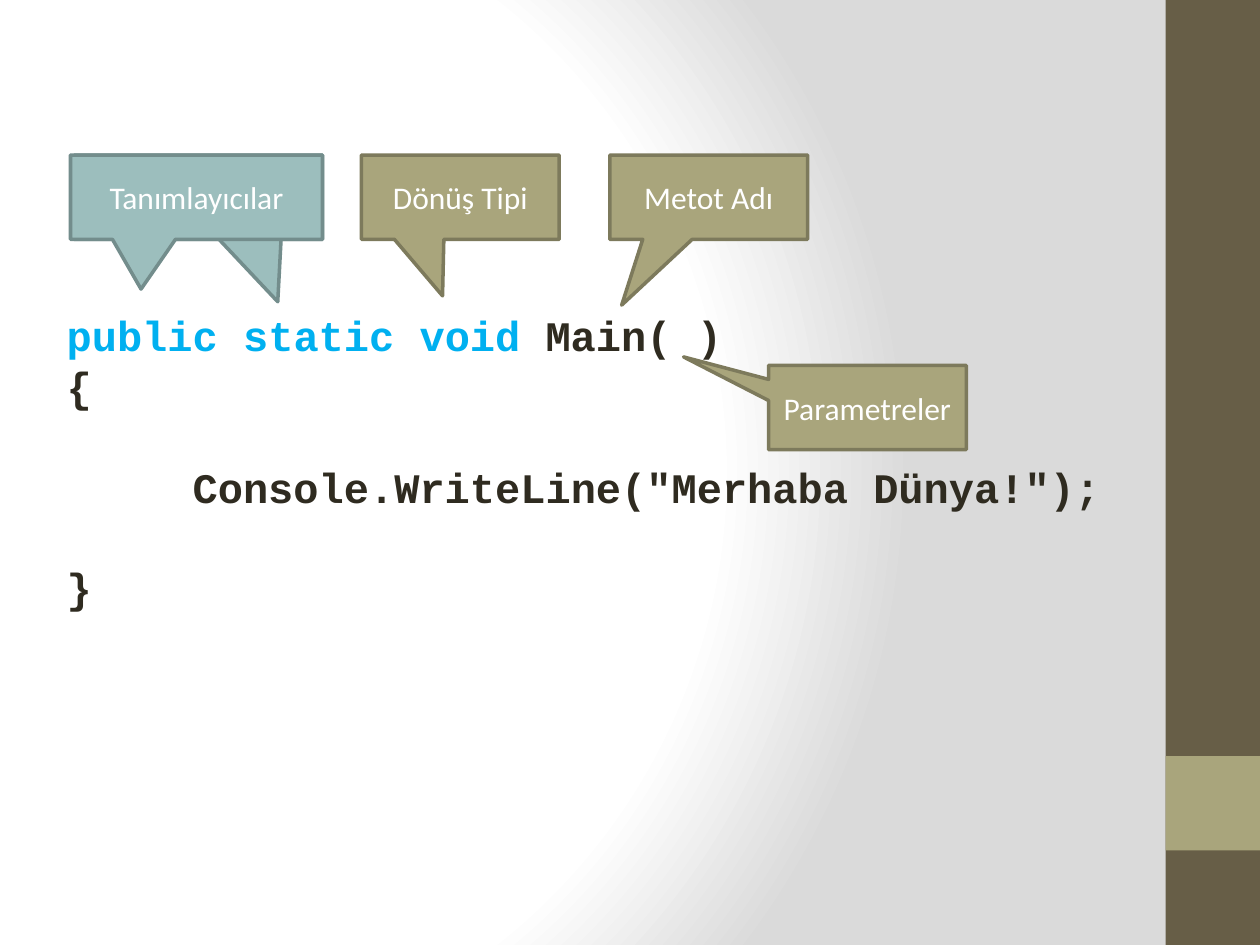
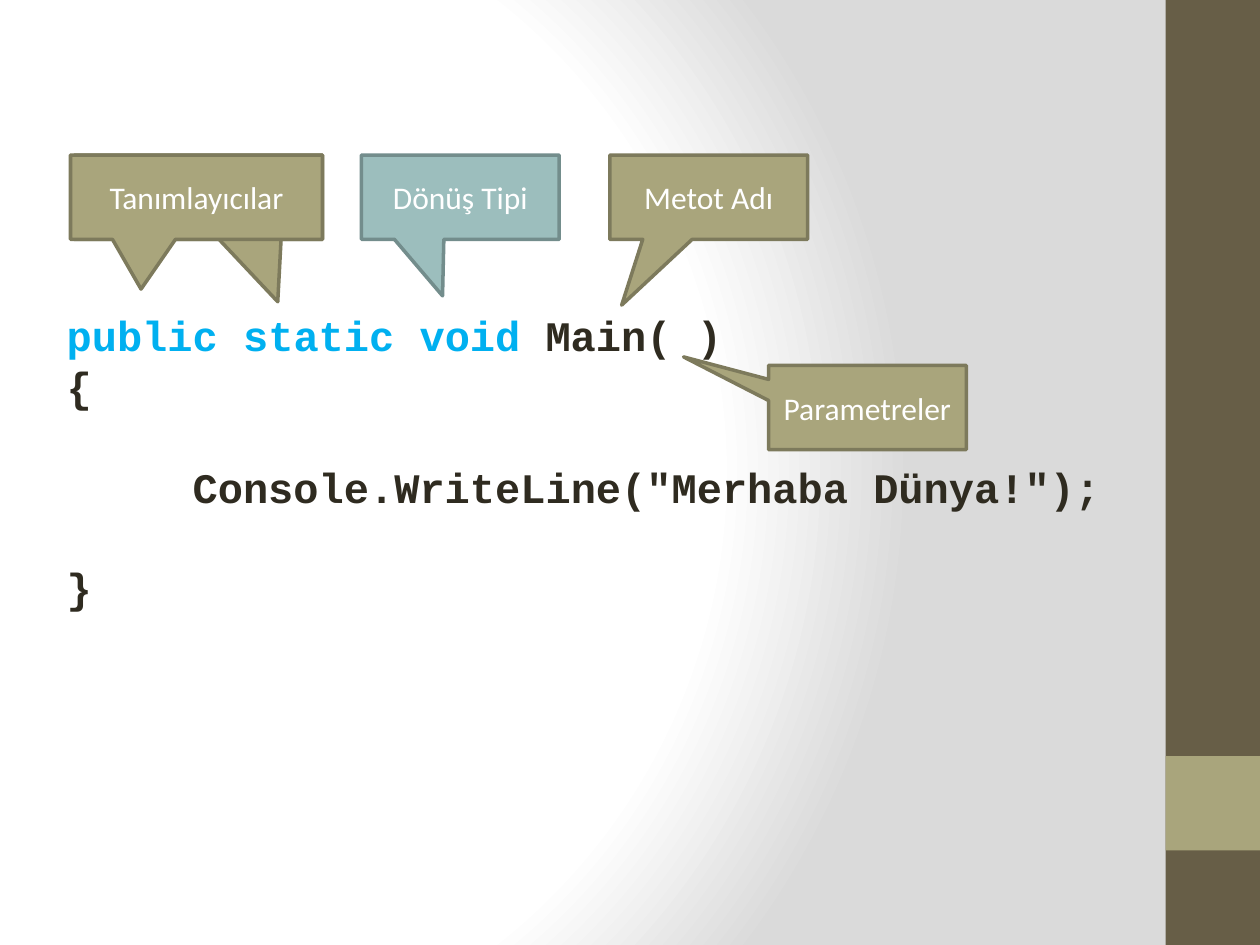
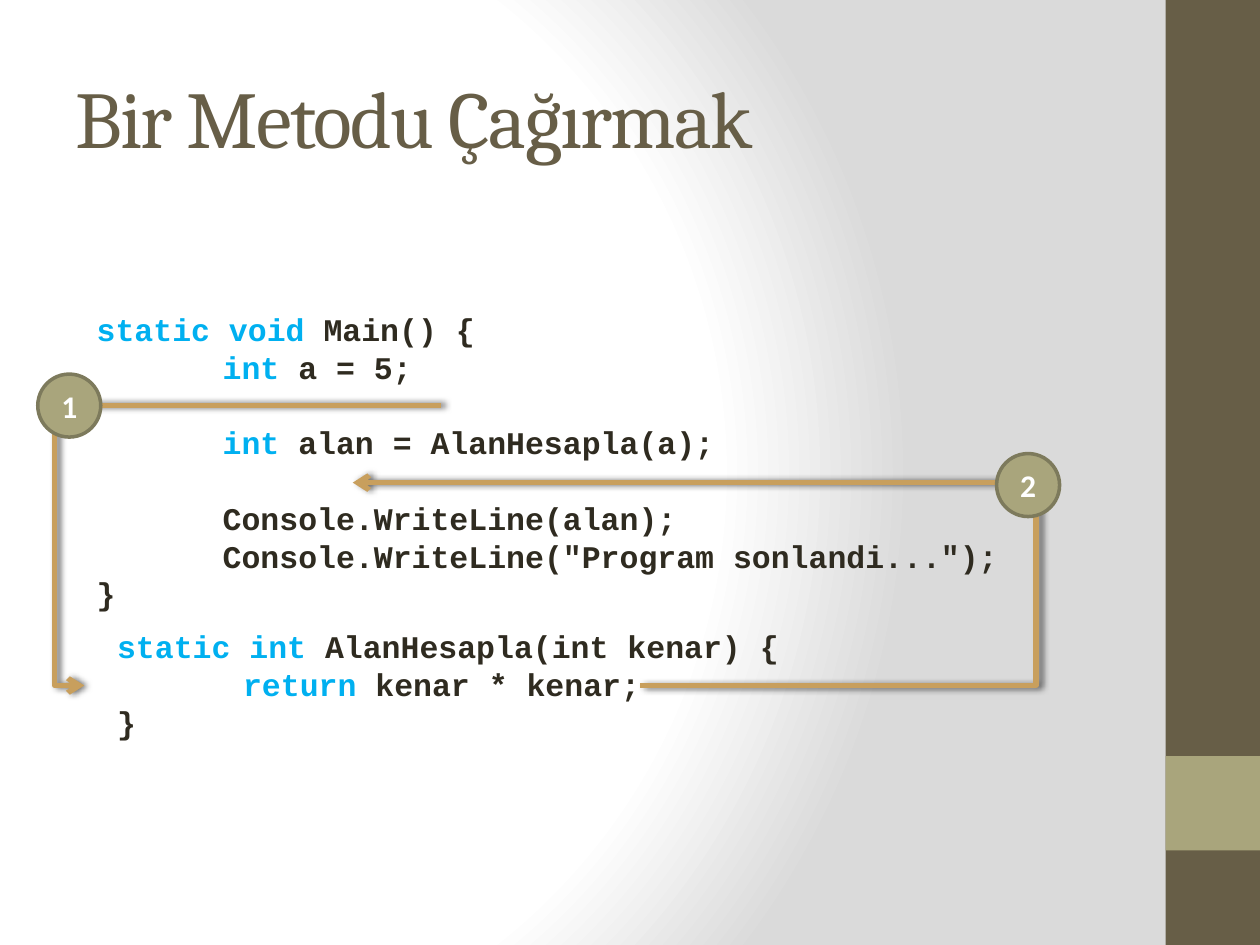
from dataclasses import dataclass
from typing import NamedTuple

from lxml import etree
from pptx import Presentation
from pptx.dml.color import RGBColor as RGB
from pptx.enum.shapes import MSO_CONNECTOR, MSO_SHAPE as SHAPE
from pptx.enum.text import MSO_ANCHOR as ANCHOR, MSO_AUTO_SIZE as FIT, PP_ALIGN as ALIGN
from pptx.oxml import parse_xml
from pptx.oxml.ns import nsdecls, qn
from pptx.util import Pt


@dataclass(frozen=True)
class Theme:
    brown: RGB = RGB.from_string("675E47")
    olive: RGB = RGB.from_string("A9A57C")
    olive_edge: RGB = RGB.from_string("7D7A5C")
    teal: RGB = RGB.from_string("9CBEBD")
    teal_edge: RGB = RGB.from_string("738D8C")
    gold: RGB = RGB.from_string("C89F5D")
    keyword: RGB = RGB.from_string("00B0F0")
    ink: RGB = RGB.from_string("2F2B20")
    white: RGB = RGB.from_string("FFFFFF")
    title_font: str = "Cambria"
    body_font: str = "Calibri"
    code_font: str = "Courier New"
    title_size: float = 46
    code_size: float = 24
    body_size: float = 18


T = Theme()
LINE_PITCH = 1.2  # height of a code line relative to its type size


class Box(NamedTuple):
    x: float
    y: float
    w: float
    h: float

    def emu(self) -> tuple:
        return tuple(Pt(v) for v in self)


class Callout(NamedTuple):
    label: str
    box: Box
    tip: tuple[float, float]


class CodeLine(NamedTuple):
    keyword: str
    rest: str
    indented: bool = False
    gap_after: bool = False


class CallArrow(NamedTuple):
    start: tuple[float, float]
    end: tuple[float, float]
    bend: float


class Step(NamedTuple):
    number: str
    x: float
    y: float


# Content
ROW_Y, CALLOUT_W, CALLOUT_H = 88.6, 113, 48.2
CALLOUTS = [
    Callout("Tanımlayıcılar", Box(42.5, ROW_Y, 141.8, CALLOUT_H), (0.32, 1.24)),
    Callout("Tanımlayıcılar", Box(40.3, ROW_Y, 144, CALLOUT_H), (-0.22, 1.09)),
    Callout("Dönüş Tipi", Box(206.6, ROW_Y, CALLOUT_W, CALLOUT_H), (-0.09, 1.17)),
    Callout("Metot Adı", Box(348.5, ROW_Y, CALLOUT_W, CALLOUT_H), (-0.44, 1.28)),
    Callout("Parametreler", Box(439.2, 208.8, CALLOUT_W, CALLOUT_H), (-0.93, -0.6)),
]
HELLO_CODE = [
    CodeLine("public static void ", "Main( )"),
    CodeLine("", "{", gap_after=True),
    CodeLine("", 'Console.WriteLine("Merhaba Dünya!");', True, True),
    CodeLine("", "}"),
]
CALLER_CODE = [
    CodeLine("static void ", "Main() {"),
    CodeLine("int", " a = 5;", True, True),
    CodeLine("int ", "alan = AlanHesapla(a);", True, True),
    CodeLine("", "Console.WriteLine(alan);", True),
    CodeLine("", 'Console.WriteLine("Program sonlandi...");', True),
    CodeLine("", "}"),
]
METHOD_CODE = [
    CodeLine("static int ", "AlanHesapla(int kenar) {"),
    CodeLine("return ", "kenar * kenar;", True),
    CodeLine("", "}"),
]
ARROWS = [
    CallArrow((252, 231.8), (48.2, 391.7), 1.083),
    CallArrow((365.8, 391.7), (201.6, 275.8), -1.378),
]
STEPS = [Step("1", 21.6, 213.8), Step("2", 569.5, 259.2)]


# Shared drawing
def set_background(master) -> None:
    master.background.fill.solid()
    bg_pr = master.element.find(".//" + qn("p:bgPr"))
    stops = "".join(
        f'<a:gs pos="{pos}"><a:srgbClr val="{color}"/></a:gs>'
        for pos, color in ((0, "FFFFFF"), (75000, "FFFFFF"), (100000, "DADADA"))
    )
    bg_pr.replace(bg_pr[0], parse_xml(
        f'<a:gradFill {nsdecls("a")} rotWithShape="1"><a:gsLst>{stops}</a:gsLst>'
        '<a:path path="circle"><a:fillToRect l="20000" t="50000" r="100000" b="50000"/>'
        '</a:path></a:gradFill>'
    ))


def add_filled(s, kind: SHAPE, box: Box, fill: RGB, edge: RGB | None = None):
    sp = s.shapes.add_shape(kind, *box.emu())
    sp.shadow.inherit = False
    sp.fill.solid()
    sp.fill.fore_color.rgb = fill
    if edge is None:
        sp.line.fill.background()
    else:
        sp.line.color.rgb = edge
        sp.line.width = Pt(2)
    return sp


def set_font(font, name: str, size: float, color: RGB, bold: bool = False) -> None:
    font.name, font.size, font.bold = name, Pt(size), bold
    font.color.rgb = color


def add_label(sp, text: str, bold: bool = False) -> None:
    tf = sp.text_frame
    tf.vertical_anchor = ANCHOR.MIDDLE
    p = tf.paragraphs[0]
    p.text, p.alignment = text, ALIGN.CENTER
    set_font(p.font, T.body_font, T.body_size, T.white, bold)


def new_slide(prs):
    s = prs.slides.add_slide(prs.slide_layouts[6])
    add_filled(s, SHAPE.RECTANGLE, Box(666, 0, 54, 540), T.brown)
    add_filled(s, SHAPE.RECTANGLE, Box(666, 432, 54, 54), T.olive)
    return s


def add_title(s, text: str) -> None:
    tf = s.shapes.add_textbox(*Box(36, 21.6, 600, 90).emu()).text_frame
    tf.word_wrap, tf.vertical_anchor = True, ANCHOR.MIDDLE
    p = tf.paragraphs[0]
    r = p.add_run()
    r.text = text
    set_font(p.font, T.title_font, T.title_size, T.brown)
    r.font._element.set("spc", "-100")


def add_code(s, box: Box, lines: list[CodeLine], size: float) -> None:
    tf = s.shapes.add_textbox(*box.emu()).text_frame
    tf.word_wrap, tf.auto_size = True, FIT.SHAPE_TO_FIT_TEXT
    for i, line in enumerate(lines):
        p = tf.add_paragraph() if i else tf.paragraphs[0]
        if line.indented:
            p._p.get_or_add_pPr().set("marL", str(Pt(72)))
        if line.gap_after:
            p.space_after = Pt(size * LINE_PITCH)
        for text, color in ((line.keyword, T.keyword), (line.rest, T.ink)):
            if text:
                r = p.add_run()
                r.text = text
                set_font(r.font, T.code_font, size, color, True)


def add_callout(s, callout: Callout, active: bool) -> None:
    fill, edge = (T.teal, T.teal_edge) if active else (T.olive, T.olive_edge)
    sp = add_filled(s, SHAPE.RECTANGULAR_CALLOUT, callout.box, fill, edge)
    sp.adjustments[0], sp.adjustments[1] = callout.tip
    add_label(sp, callout.label)


def add_arrow(s, arrow: CallArrow) -> None:
    ends = [Pt(v) for v in arrow.start + arrow.end]
    cn = s.shapes.add_connector(MSO_CONNECTOR.ELBOW, *ends)
    cn.line.color.rgb, cn.line.width = T.gold, Pt(3)
    etree.SubElement(cn.line._get_or_add_ln(), qn("a:tailEnd"), type="arrow")
    sp_pr = cn._element.spPr
    guides = sp_pr.find(qn("a:prstGeom")).get_or_add_avLst()
    etree.SubElement(guides, qn("a:gd"), name="adj1", fmla=f"val {round(arrow.bend * 100000)}")
    sp_pr.append(parse_xml(
        f'<a:effectLst {nsdecls("a")}><a:outerShdw blurRad="{Pt(4)}" dist="{Pt(2)}" dir="0">'
        '<a:srgbClr val="000000"><a:alpha val="60000"/></a:srgbClr></a:outerShdw></a:effectLst>'
    ))


# Slides
def method_parts_slide(prs, active_label: str) -> None:
    s = new_slide(prs)
    add_code(s, Box(31, 173.5, 612, 181.4), HELLO_CODE, T.code_size)
    for callout in CALLOUTS:
        add_callout(s, callout, callout.label == active_label)


def method_call_slide(prs) -> None:
    s = new_slide(prs)
    add_title(s, "Bir Metodu Çağırmak")
    add_code(s, Box(48.2, 173.5, 532.8, 181.4), CALLER_CODE, T.body_size)
    add_code(s, Box(59.8, 355, 589.7, 72.7), METHOD_CODE, T.body_size)
    for arrow in ARROWS:
        add_arrow(s, arrow)
    for step in STEPS:
        sp = add_filled(s, SHAPE.OVAL, Box(step.x, step.y, 36, 36), T.olive, T.olive_edge)
        add_label(sp, step.number, bold=True)


def main() -> None:
    prs = Presentation()
    prs.slide_width, prs.slide_height = Pt(720), Pt(540)
    set_background(prs.slide_master)
    for active_label in ("Tanımlayıcılar", "Dönüş Tipi"):
        method_parts_slide(prs, active_label)
    method_call_slide(prs)
    prs.save("out.pptx")


if __name__ == "__main__":
    main()
